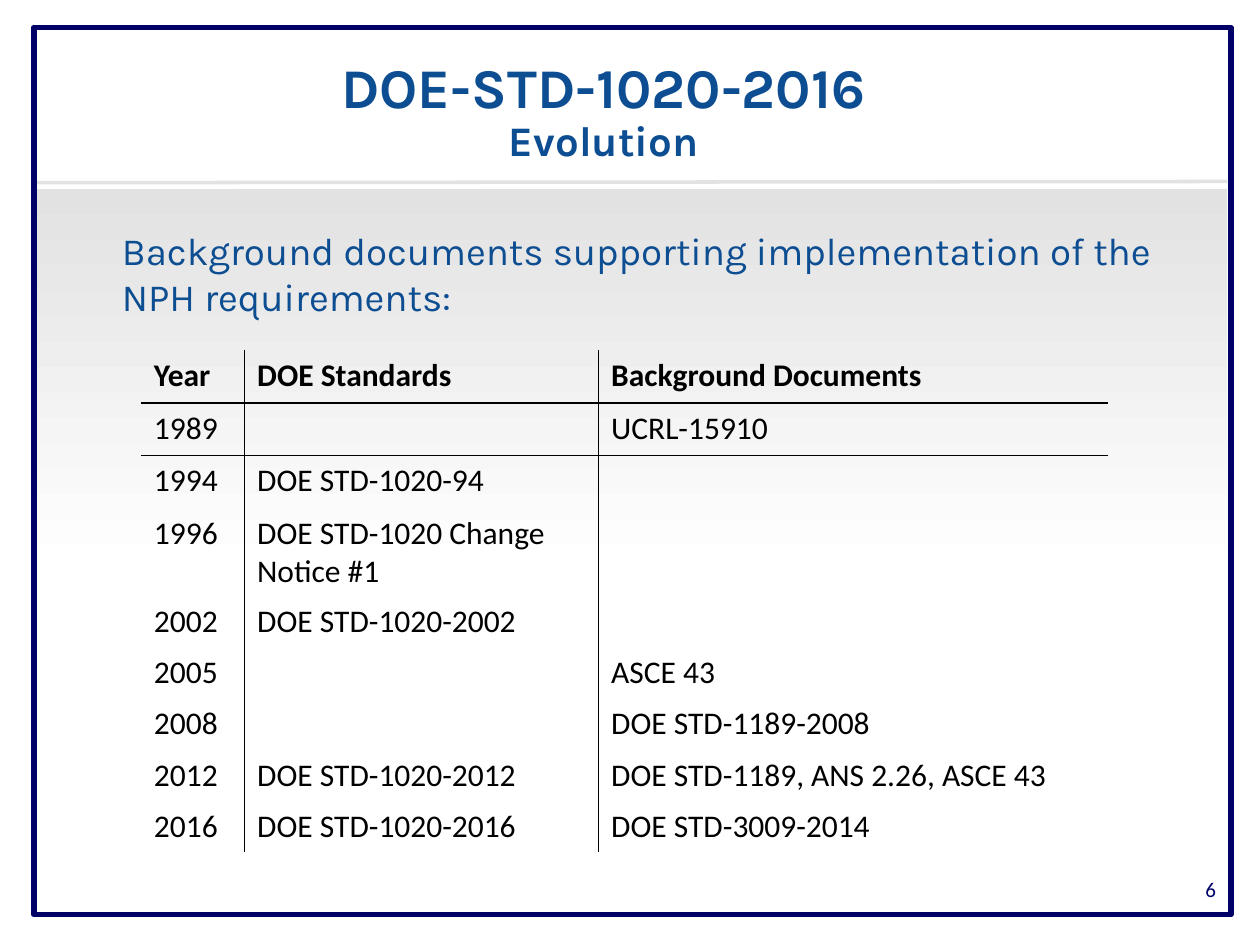
from dataclasses import dataclass

from lxml.etree import SubElement
from pptx import Presentation
from pptx.dml.color import RGBColor
from pptx.enum.shapes import MSO_CONNECTOR, MSO_SHAPE
from pptx.enum.text import MSO_ANCHOR, PP_ALIGN
from pptx.oxml.ns import qn
from pptx.util import Pt

NAVY = RGBColor(0x00, 0x00, 0x66)
BLUE = RGBColor(0x0D, 0x4D, 0x91)
GREY = RGBColor(0xE2, 0xE2, 0xE2)
WHITE = RGBColor(0xFF, 0xFF, 0xFF)
BLACK = RGBColor(0x00, 0x00, 0x00)

COLUMN_WIDTHS = (59, 202.3, 290.9)
ROWS = (
    ("Year", "DOE Standards", "Background Documents"),
    ("1989", "", "UCRL-15910"),
    ("1994", "DOE STD-1020-94", ""),
    ("1996", "DOE STD-1020 Change Notice #1", ""),
    ("2002", "DOE STD-1020-2002", ""),
    ("2005", "", "ASCE 43"),
    ("2008", "", "DOE STD-1189-2008"),
    ("2012", "DOE STD-1020-2012", "DOE STD-1189, ANS 2.26, ASCE 43"),
    ("2016", "DOE STD-1020-2016", "DOE STD-3009-2014"),
)
RULED_ROWS = 2
TALL_ROWS = 3


@dataclass(frozen=True)
class Label:
    text: str
    box: tuple[float, float, float, float]
    font: str
    sizes: tuple[float, ...]
    color: RGBColor
    bold: bool = False
    align: PP_ALIGN = PP_ALIGN.LEFT
    anchor: MSO_ANCHOR = MSO_ANCHOR.TOP
    line_spacing: float = 1.0


LABELS = (
    Label("DOE-STD-1020-2016\vEvolution", (126, 23.8, 437.8, 81.4), "Karla", (32, 24),
          BLUE, True, PP_ALIGN.CENTER, MSO_ANCHOR.MIDDLE, 0.9),
    Label("Background documents supporting implementation of the NPH requirements:",
          (62.6, 126, 606.2, 372.2), "Karla", (22,), BLUE),
    Label("6", (666, 493.9, 36, 28.8), "Calibri", (12,), NAVY,
          align=PP_ALIGN.RIGHT, anchor=MSO_ANCHOR.MIDDLE),
)


def add_label(s, label: Label) -> None:
    tf = s.shapes.add_textbox(*map(Pt, label.box)).text_frame
    tf.word_wrap = True
    tf.vertical_anchor = label.anchor
    tf.text = label.text
    p = tf.paragraphs[0]
    p.alignment = label.align
    p.line_spacing = label.line_spacing
    for r, size in zip(p.runs, label.sizes):
        r.font.name = label.font
        r.font.size = Pt(size)
        r.font.bold = label.bold
        r.font.color.rgb = label.color


def add_frame(s) -> None:
    panel = s.shapes.add_shape(MSO_SHAPE.RECTANGLE, Pt(20.9), Pt(108), Pt(680.4), Pt(218.2))
    panel.shadow.inherit = False
    panel.line.fill.background()
    panel.fill.gradient()
    panel.fill.gradient_angle = 90
    for stop, color, position in zip(panel.fill.gradient_stops, (WHITE, GREY), (0, 1)):
        stop.color.rgb = color
        stop.position = position

    rule = s.shapes.add_connector(MSO_CONNECTOR.STRAIGHT, Pt(20.2), Pt(104.4), Pt(701.3), Pt(103.7))
    rule.line.color.rgb = GREY
    rule.line.width = Pt(2)
    SubElement(rule._element.spPr, qn("a:effectLst"))

    border = s.shapes.add_shape(MSO_SHAPE.RECTANGLE, Pt(19.4), Pt(15.8), Pt(684), Pt(506.9))
    border.shadow.inherit = False
    border.fill.background()
    border.line.color.rgb = NAVY
    border.line.width = Pt(3.25)


def set_borders(cell, visible: dict[str, bool]) -> None:
    tc_pr = cell._tc.get_or_add_tcPr()
    for index, (side, shown) in enumerate(visible.items()):
        ln = tc_pr.makeelement(qn(f"a:{side}"), {"w": str(Pt(1))})
        tc_pr.insert(index, ln)
        fill = SubElement(ln, qn("a:solidFill" if shown else "a:noFill"))
        if shown:
            SubElement(fill, qn("a:srgbClr"), val=str(BLACK))


def add_history_table(s) -> None:
    frame = s.shapes.add_table(len(ROWS), len(COLUMN_WIDTHS), Pt(80.8), Pt(200.2),
                               Pt(sum(COLUMN_WIDTHS)), Pt(267))
    table = frame.table
    table.first_row = table.horz_banding = False
    for column, width in zip(table.columns, COLUMN_WIDTHS):
        column.width = Pt(width)
    for i, row in enumerate(ROWS):
        table.rows[i].height = Pt(30 if i < TALL_ROWS else 29.3)
        for j, text in enumerate(row):
            cell = table.cell(i, j)
            cell.fill.background()
            set_borders(cell, {
                "lnL": j > 0,
                "lnR": j < len(row) - 1,
                "lnT": 0 < i <= RULED_ROWS,
                "lnB": i < RULED_ROWS,
            })
            cell.text_frame.text = text
            font = cell.text_frame.paragraphs[0].font
            font.name = "Calibri"
            font.size = Pt(18)
            font.bold = i == 0
            font.color.rgb = BLACK


def main() -> None:
    prs = Presentation()
    prs.slide_width, prs.slide_height = Pt(720), Pt(540)
    s = prs.slides.add_slide(prs.slide_layouts[6])
    add_frame(s)
    for label in LABELS:
        add_label(s, label)
    add_history_table(s)
    prs.save("out.pptx")


if __name__ == "__main__":
    main()
